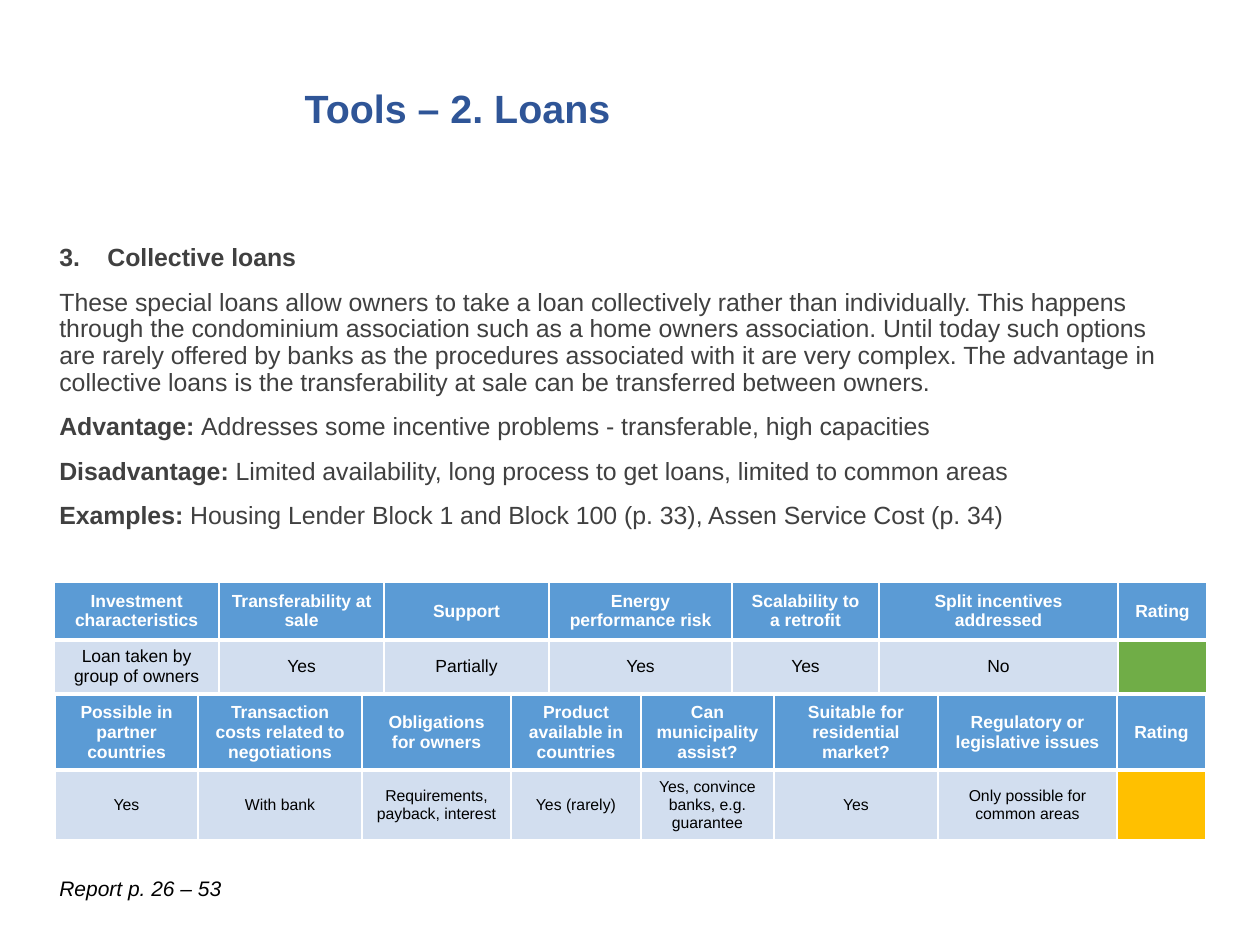
from dataclasses import dataclass

from lxml import etree
from pptx import Presentation
from pptx.dml.color import RGBColor
from pptx.enum.text import MSO_ANCHOR, MSO_AUTO_SIZE, PP_ALIGN
from pptx.oxml.ns import qn
from pptx.util import Emu, Pt

MID, TOP = MSO_ANCHOR.MIDDLE, MSO_ANCHOR.TOP
LEFT, MIDST = PP_ALIGN.LEFT, PP_ALIGN.CENTER
FIXED = MSO_AUTO_SIZE.NONE

WHITE = RGBColor(0xFF, 0xFF, 0xFF)
BLACK = RGBColor(0, 0, 0)
GREY = RGBColor(0x40, 0x40, 0x40)
NAVY = RGBColor(0x2F, 0x55, 0x97)
BLUE = RGBColor(0x5B, 0x9B, 0xD5)
PALE = RGBColor(0xD2, 0xDE, 0xEF)
GREEN = RGBColor(0x70, 0xAD, 0x47)
AMBER = RGBColor(0xFF, 0xC0, 0x00)

SCALE = 914400 / 126  # EMU in one px


@dataclass(frozen=True)
class Box:
    x: int
    y: int
    w: int
    h: int


@dataclass(frozen=True)
class Style:
    size: float
    color: RGBColor
    bold: bool = False
    italic: bool = False


@dataclass(frozen=True)
class Grid:
    x: int
    y: int
    cols: tuple[int, ...]
    rows: tuple[int, int]
    heads: tuple[str, ...]
    cells: tuple[str, ...]
    size: int
    rating: RGBColor


HEAD = Style(10, WHITE, bold=True)
TITLE = Style(22.5, NAVY, bold=True)
NOTE = Style(12, BLACK, italic=True)
PLAIN = Style(14.2, GREY)
STRONG = Style(14.2, GREY, bold=True)

BODY = (
    ("Collective loans", ""),
    ("", "These special loans allow owners to take a loan collectively rather than "
     "individually. This happens through the condominium association such as a home "
     "owners association. Until today such options are rarely offered by banks as the "
     "procedures associated with it are very complex. The advantage in collective loans "
     "is the transferability at sale can be transferred between owners."),
    ("Advantage: ", "Addresses some incentive problems - transferable, high capacities"),
    ("Disadvantage:", " Limited availability, long process to get loans, "
     "limited to common areas"),
    ("Examples: ", "Housing Lender Block 1 and Block 100 (p. 33), "
     "Assen Service Cost (p. 34)"),
)

GRIDS = (
    Grid(54, 582, (165, 165, 165, 183, 147, 239, 89), (58, 53),
         ("Investment characteristics", "Transferability at sale", "Support",
          "Energy performance risk", "Scalability to a retrofit",
          "Split incentives addressed", "Rating"),
         ("Loan taken by group of owners", "Yes", "Partially", "Yes", "Yes", "No", ""),
         10, GREEN),
    Grid(55, 695, (143, 164, 149, 130, 133, 164, 179, 89), (75, 70),
         ("Possible in partner countries", "Transaction costs related to negotiations",
          "Obligations for owners", "Product available in countries",
          "Can municipality assist?", "Suitable for residential market?",
          "Regulatory or legislative issues", "Rating"),
         ("Yes", "With bank", "Requirements, payback, interest", "Yes (rarely)",
          "Yes, convince banks, e.g. guarantee", "Yes",
          "Only possible for common areas", ""),
         9, AMBER),
)


def px(n: int) -> Emu:
    return Emu(round(n * SCALE))


def assign(item, values: dict) -> None:
    for name, value in values.items():
        setattr(item, name, value)


def place(shape, box: Box) -> None:
    assign(shape, {"left": px(box.x), "top": px(box.y),
                   "width": px(box.w), "height": px(box.h)})


def write(para, text: str, style: Style) -> None:
    run = para.add_run()
    run.text = text
    assign(run.font, {"name": "Arial", "size": Pt(style.size),
                      "bold": style.bold, "italic": style.italic})
    run.font.color.rgb = style.color


def text_box(slide, box: Box):
    shape = slide.shapes.add_textbox(0, 0, 0, 0)
    place(shape, box)
    assign(shape.text_frame, {"word_wrap": True, "auto_size": FIXED,
                              "vertical_anchor": TOP})
    return shape.text_frame


def number(para, start: int, indent: int) -> None:
    """Give the paragraph an automatic number with a hanging indent."""
    props = para._p.get_or_add_pPr()
    props.set("marL", str(px(indent)))
    props.set("indent", str(-px(indent)))
    etree.SubElement(props, qn("a:buAutoNum"), type="arabicPeriod", startAt=str(start))


def draw_title(slide) -> None:
    title = slide.shapes.title
    place(title, Box(292, 75, 791, 71))
    frame = title.text_frame
    assign(frame, {"word_wrap": True, "auto_size": FIXED, "vertical_anchor": MID})
    para = frame.paragraphs[0]
    assign(para, {"alignment": LEFT, "line_spacing": 0.9})
    write(para, "Tools – 2. Loans", TITLE)


def draw_body(slide) -> None:
    frame = text_box(slide, Box(47, 239, 1126, 310))
    for i, (lead, rest) in enumerate(BODY):
        para = frame.add_paragraph() if i else frame.paragraphs[0]
        if i == 0:
            number(para, 3, 48)
        assign(para, {"line_spacing": 0.9, "space_before": Pt(10 if i else 0)})
        for text, style in ((lead, STRONG), (rest, PLAIN)):
            if text:
                write(para, text, style)


def edge(cell, top: int, bottom: int) -> None:
    """Draw white cell borders, with top and bottom widths in points."""
    props = cell._tc.get_or_add_tcPr()
    for side, width in (("L", 1), ("R", 1), ("T", top), ("B", bottom)):
        line = etree.SubElement(props, qn(f"a:ln{side}"), w=str(Pt(width)))
        fill = etree.SubElement(line, qn("a:solidFill"))
        etree.SubElement(fill, qn("a:srgbClr"), val=str(WHITE))


def draw_cell(cell, text: str, style: Style, fill: RGBColor) -> None:
    cell.fill.solid()
    cell.fill.fore_color.rgb = fill
    cell.vertical_anchor = MID
    para = cell.text_frame.paragraphs[0]
    para.alignment = MIDST
    if text:
        write(para, text, style)


def draw_grid(slide, grid: Grid) -> None:
    table = slide.shapes.add_table(2, len(grid.cols), px(grid.x), px(grid.y),
                                   px(sum(grid.cols)), px(sum(grid.rows))).table
    for col, width in zip(table.columns, grid.cols):
        col.width = px(width)
    for row, height in zip(table.rows, grid.rows):
        row.height = px(height)
    last = len(grid.cols) - 1
    for i, (head, text) in enumerate(zip(grid.heads, grid.cells)):
        upper, lower = table.cell(0, i), table.cell(1, i)
        edge(upper, 1, 3)
        edge(lower, 3, 1)
        draw_cell(upper, head, HEAD, BLUE)
        draw_cell(lower, text, Style(grid.size, BLACK),
                  grid.rating if i == last else PALE)


def main() -> None:
    deck = Presentation()
    assign(deck, {"slide_width": px(1260), "slide_height": px(945)})
    slide = deck.slides.add_slide(deck.slide_layouts[5])
    draw_title(slide)
    draw_body(slide)
    for grid in GRIDS:
        draw_grid(slide, grid)
    note = text_box(slide, Box(47, 869, 292, 38))
    write(note.paragraphs[0], "Report p. 26 – 53", NOTE)
    deck.save("out.pptx")


if __name__ == "__main__":
    main()
